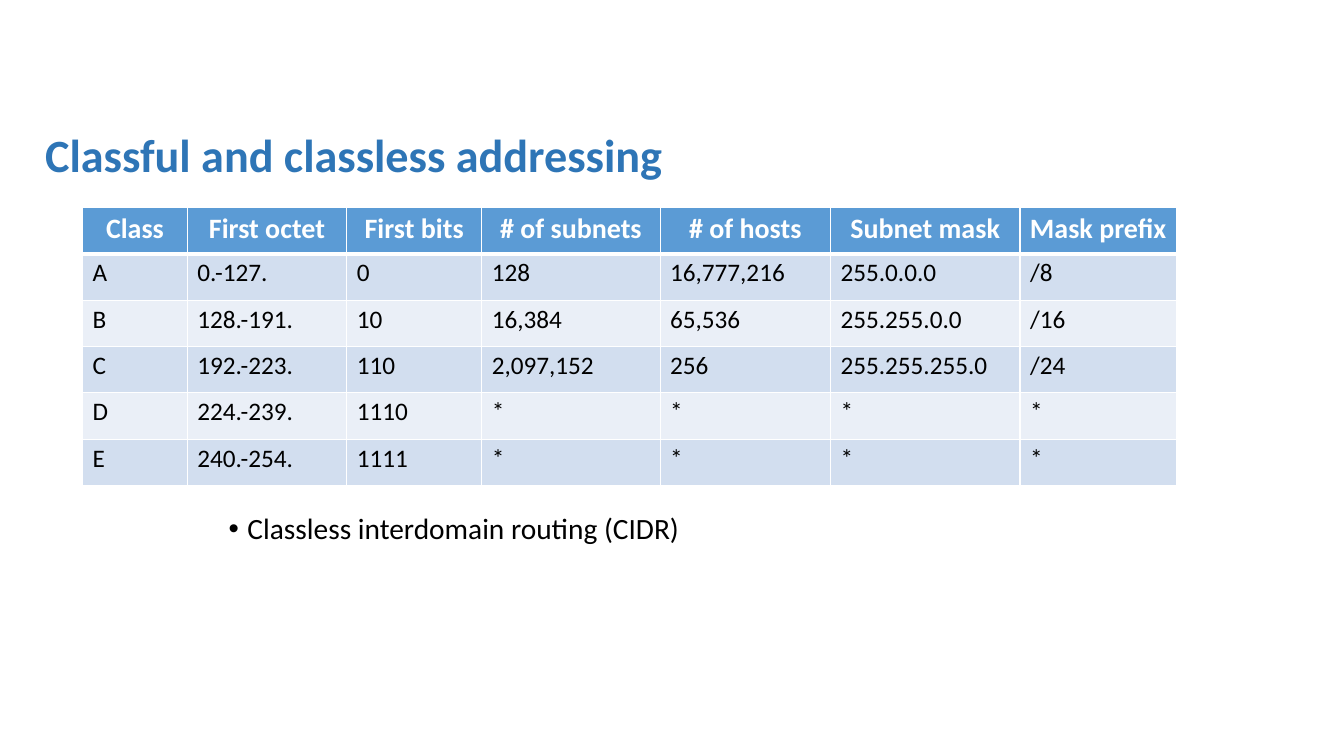
"""Build a slide that compares classful and classless addressing."""
import dataclasses
import typing

import lxml.etree
import pptx
import pptx.dml.color
import pptx.enum.text
import pptx.oxml.ns
import pptx.util

Pt = pptx.util.Pt
RGBColor = pptx.dml.color.RGBColor
Align = pptx.enum.text.PP_ALIGN
Anchor = pptx.enum.text.MSO_ANCHOR

FONT = "Calibri"
TITLE_BLUE = RGBColor(0x2E, 0x75, 0xB6)
HEADER_BLUE = RGBColor(0x5B, 0x9B, 0xD5)
BAND_DARK = RGBColor(0xD2, 0xDE, 0xEF)
BAND_LIGHT = RGBColor(0xEA, 0xEF, 0xF7)
BLACK = RGBColor(0, 0, 0)
WHITE = RGBColor(0xFF, 0xFF, 0xFF)

TABLE_LEFT, TABLE_TOP = 59, 148.3
ROW_HEIGHT = 33.1
CELL_INSET = 2.88
THIN, THICK = 1, 3
COLUMN_WIDTHS = (74.9, 113.8, 96.5, 127.4, 121.7, 135.4, 111.6)
ADDRESS_CLASSES = (
    ("Class", "First octet", "First bits", "# of subnets", "# of hosts", "Subnet mask", "Mask prefix"),
    ("A", "0.-127.", "0", "128", "16,777,216", "255.0.0.0", "/8"),
    ("B", "128.-191.", "10", "16,384", "65,536", "255.255.0.0", "/16"),
    ("C", "192.-223.", "110", "2,097,152", "256", "255.255.255.0", "/24"),
    ("D", "224.-239.", "1110", "*", "*", "*", "*"),
    ("E", "240.-254.", "1111", "*", "*", "*", "*"),
)


@dataclasses.dataclass(frozen=True)
class TextStyle:
    """Character and paragraph formatting, with lengths in points."""

    size: float
    color: RGBColor
    bold: bool = False
    align: Align = Align.LEFT
    line_spacing: float = 1.0
    before: float = 0
    after: float = 0
    margin: float = 0
    indent: float = 0
    bullet: str = ""


@dataclasses.dataclass(frozen=True)
class TextBlock:
    """A text box with its place in points."""

    text: str
    left: float
    top: float
    width: float
    height: float
    anchor: Anchor
    style: TextStyle


HEADER_STYLE = TextStyle(20, WHITE, bold=True, align=Align.CENTER)
CELL_STYLE = TextStyle(18, BLACK, before=4.3, after=2.9, margin=4.3)
TEXT_BLOCKS = (
    TextBlock("Classful and classless addressing", 25.2, 77, 913, 71.3, Anchor.MIDDLE,
              TextStyle(33, TITLE_BLUE, bold=True, line_spacing=0.9)),
    TextBlock("Classless interdomain routing (CIDR)", 156.2, 363.6, 666, 162, Anchor.TOP,
              TextStyle(21, BLACK, line_spacing=0.9, before=7.5, margin=13.5, indent=-13.5, bullet="•")),
)


def write_text(text_frame: typing.Any, text: str, style: TextStyle) -> None:
    """Write one formatted paragraph into a text frame."""
    paragraph = text_frame.paragraphs[0]
    paragraph.alignment = style.align
    paragraph.line_spacing = style.line_spacing
    paragraph.space_before = Pt(style.before)
    paragraph.space_after = Pt(style.after)
    properties = paragraph._p.get_or_add_pPr()
    properties.set("marL", str(Pt(style.margin)))
    properties.set("indent", str(Pt(style.indent)))
    if style.bullet:
        font = lxml.etree.SubElement(properties, pptx.oxml.ns.qn("a:buFont"))
        font.set("typeface", "Arial")
        bullet = lxml.etree.SubElement(properties, pptx.oxml.ns.qn("a:buChar"))
        bullet.set("char", style.bullet)
    run = paragraph.add_run()
    run.text = text
    run.font.name = FONT
    run.font.size = Pt(style.size)
    run.font.bold = style.bold
    run.font.color.rgb = style.color


def add_text_block(slide: typing.Any, block: TextBlock) -> None:
    """Add a wrapped text box to the slide."""
    shape = slide.shapes.add_textbox(Pt(block.left), Pt(block.top), Pt(block.width), Pt(block.height))
    shape.text_frame.word_wrap = True
    shape.text_frame.vertical_anchor = block.anchor
    write_text(shape.text_frame, block.text, block.style)


def set_borders(cell: typing.Any, top: float, bottom: float) -> None:
    """Draw white borders around a table cell."""
    properties = cell._tc.get_or_add_tcPr()
    for side, width in (("L", THIN), ("R", THIN), ("T", top), ("B", bottom)):
        line = lxml.etree.SubElement(properties, pptx.oxml.ns.qn(f"a:ln{side}"), w=str(Pt(width)))
        fill = lxml.etree.SubElement(line, pptx.oxml.ns.qn("a:solidFill"))
        lxml.etree.SubElement(fill, pptx.oxml.ns.qn("a:srgbClr"), val=str(WHITE))


def add_class_table(slide: typing.Any) -> None:
    """Add the table of address classes."""
    row_count = len(ADDRESS_CLASSES)
    table = slide.shapes.add_table(
        row_count, len(COLUMN_WIDTHS), Pt(TABLE_LEFT), Pt(TABLE_TOP),
        Pt(sum(COLUMN_WIDTHS)), Pt(ROW_HEIGHT * row_count)).table
    for column, width in zip(table.columns, COLUMN_WIDTHS):
        column.width = Pt(width)
    for row_index, values in enumerate(ADDRESS_CLASSES):
        table.rows[row_index].height = Pt(ROW_HEIGHT)
        is_header = row_index == 0
        band = BAND_DARK if row_index % 2 else BAND_LIGHT
        for column_index, text in enumerate(values):
            cell = table.cell(row_index, column_index)
            cell.margin_left = cell.margin_right = Pt(CELL_INSET)
            cell.margin_top = cell.margin_bottom = Pt(CELL_INSET)
            set_borders(cell, THICK if row_index == 1 else THIN, THICK if is_header else THIN)
            cell.fill.solid()
            cell.fill.fore_color.rgb = HEADER_BLUE if is_header else band
            write_text(cell.text_frame, text, HEADER_STYLE if is_header else CELL_STYLE)


def main() -> None:
    """Build and save the presentation."""
    presentation = pptx.Presentation()
    presentation.slide_width = Pt(960)
    presentation.slide_height = Pt(540)
    slide = presentation.slides.add_slide(presentation.slide_layouts[6])
    for block in TEXT_BLOCKS:
        add_text_block(slide, block)
    add_class_table(slide)
    presentation.save("out.pptx")


if __name__ == "__main__":
    main()
